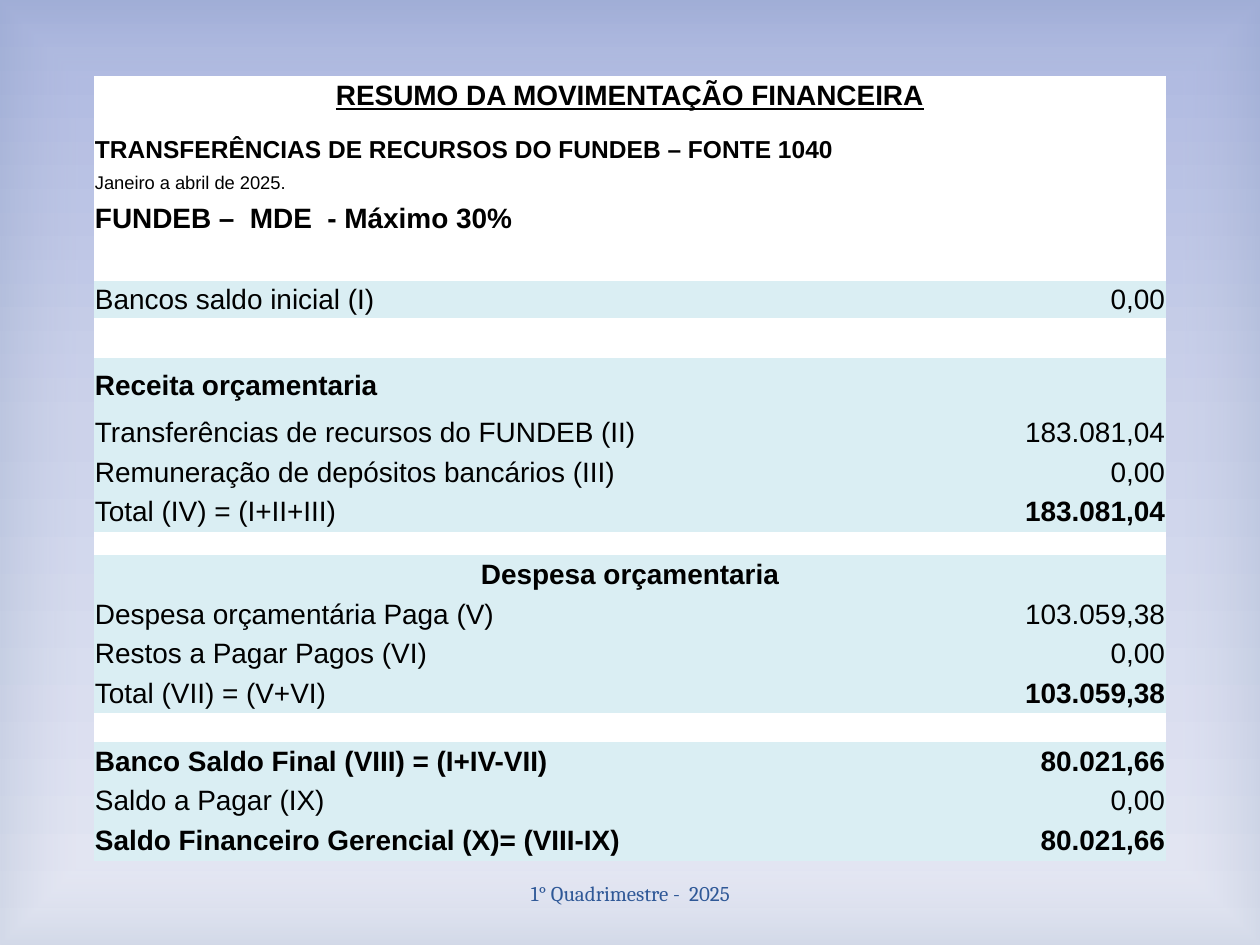
from pptx import Presentation
from pptx.dml.color import RGBColor
from pptx.enum.shapes import MSO_SHAPE as Shape
from pptx.enum.text import MSO_ANCHOR as Anchor, PP_ALIGN as Align
from pptx.oxml import parse_xml
from pptx.oxml.ns import nsdecls, qn
from pptx.util import Pt

PX = 914400 // 126
WIDTH, HEIGHT = 1260, 945
BLACK = RGBColor(0x00, 0x00, 0x00)
WHITE = RGBColor(0xFF, 0xFF, 0xFF)
AQUA = RGBColor(0xDA, 0xEE, 0xF3)
NAVY = RGBColor(0x2F, 0x58, 0x97)
SKY = [(0, "A2AEDC", 100), (45, "C6CDE8", 100), (100, "E3E6F3", 100)]
VIGNETTE = [(83, "FFFFFF", 11), (100, "9BADC4", 23)]
DOWNWARD = '<a:lin ang="5400000" scaled="0"/>'
FROM_CENTRE = '<a:path path="rect"><a:fillToRect l="50000" t="50000" r="50000" b="50000"/></a:path>'
NO_TABLE_STYLE = "{2D5ABB26-0587-4C30-8999-92F81FD0307C}"

FOOTER = "1° Quadrimestre -  2025"
TABLE_LEFT, TABLE_TOP = 94, 76
COLUMNS = (827, 245)
# height, fill, label, size, bold, alignment
HEADINGS = {
    0: (39, WHITE, "RESUMO DA MOVIMENTAÇÃO FINANCEIRA", 16, Align.CENTER),
    2: (33, WHITE, "TRANSFERÊNCIAS DE RECURSOS DO FUNDEB – FONTE 1040", 14, Align.LEFT),
    3: (33, WHITE, "Janeiro a abril de 2025.", 10.5, Align.LEFT),
    4: (39, WHITE, "FUNDEB –  MDE  - Máximo 30%", 16, Align.LEFT),
    8: (55, AQUA, "Receita orçamentaria", 16, Align.LEFT),
    13: (40, AQUA, "Despesa orçamentaria", 16, Align.CENTER),
}
GAPS = {1: 18, 5: 42, 7: 39, 12: 23, 17: 29}
ENTRIES = {
    6: (39, "Bancos saldo inicial (I)", "0,00", False, False),
    9: (40, "Transferências de recursos do FUNDEB (II)", "183.081,04", False, False),
    10: (39, "Remuneração de depósitos bancários (III)", "0,00", False, False),
    11: (40, "Total (IV) = (I+II+III)", "183.081,04", False, True),
    14: (39, "Despesa orçamentária Paga (V)", "103.059,38", False, False),
    15: (40, "Restos a Pagar Pagos (VI)", "0,00", False, False),
    16: (39, "Total (VII) = (V+VI)", "103.059,38", False, True),
    18: (39, "Banco Saldo Final (VIII) = (I+IV-VII)", "80.021,66", True, True),
    19: (40, "Saldo a Pagar (IX)", "0,00", False, False),
    20: (40, "Saldo Financeiro Gerencial (X)= (VIII-IX)", "80.021,66", True, True),
}
TITLE, PERIOD, UNSPANNED, OPENING = 0, 3, 4, 6


def paint_gradient(fill, owner, stops, direction):
    """Give the fill inside owner these (position, colour, opacity) stops."""
    fill.gradient()
    gradient = next(owner.iter(qn("a:gradFill")))
    marks = "".join(
        f'<a:gs pos="{at * 1000}"><a:srgbClr val="{colour}">'
        f'<a:alpha val="{opacity * 1000}"/></a:srgbClr></a:gs>'
        for at, colour, opacity in stops)
    gradient.getparent().replace(gradient, parse_xml(
        f'<a:gradFill {nsdecls("a")} rotWithShape="1"><a:gsLst>{marks}</a:gsLst>{direction}</a:gradFill>'))


def write(cell, text, fill, size=16, bold=False, align=Align.LEFT):
    """Fill one table cell."""
    cell.fill.solid()
    cell.fill.fore_color.rgb = fill
    cell.vertical_anchor = Anchor.MIDDLE
    cell.margin_left = cell.margin_right = cell.margin_top = PX
    cell.margin_bottom = 0
    cell.text = text
    line = cell.text_frame.paragraphs[0]
    line.alignment = align
    font = line.font
    font.name, font.size, font.bold = "Arial", Pt(size), bold
    font.color.rgb = BLACK


def rule(cell, side):
    """Draw a white line along one side of a cell."""
    cell._tc.get_or_add_tcPr().insert(0, parse_xml(
        f'<a:{side} {nsdecls("a")} w="12700"><a:solidFill><a:srgbClr val="{WHITE}"/></a:solidFill></a:{side}>'))


def add_summary(slide):
    """Add the table of balances, revenue and expenses."""
    count = len(HEADINGS) + len(GAPS) + len(ENTRIES)
    heights = {row: part[0] for row, part in (HEADINGS | ENTRIES).items()} | GAPS
    frame = slide.shapes.add_table(count, len(COLUMNS), TABLE_LEFT * PX, TABLE_TOP * PX,
                                   sum(COLUMNS) * PX, sum(heights.values()) * PX)
    table = frame.table
    table.first_row = table.horz_banding = False
    next(table._tbl.iter(qn("a:tableStyleId"))).text = NO_TABLE_STYLE
    for column, width in zip(table.columns, COLUMNS):
        column.width = width * PX
    for index, row in enumerate(table.rows):
        row.height = heights[index] * PX
        label, value = row.cells
        if index in ENTRIES:
            _, name, amount, name_bold, amount_bold = ENTRIES[index]
            write(label, name, AQUA, bold=name_bold, align=Align.JUSTIFY)
            write(value, amount, AQUA, bold=amount_bold, align=Align.RIGHT)
            continue
        _, fill, text, size, align = HEADINGS.get(index, (0, WHITE, "", 6, Align.LEFT))
        write(label, text, fill, size, index != PERIOD, align)
        write(value, "", fill, 6)
        if index != UNSPANNED:
            label.merge(value)
    table.cell(TITLE, 0).text_frame.paragraphs[0].font.underline = True
    for column in range(len(COLUMNS)):
        rule(table.cell(OPENING - 1, column), "lnB")
        rule(table.cell(OPENING, column), "lnT")


def main():
    """Build the slide."""
    deck = Presentation()
    deck.slide_width, deck.slide_height = WIDTH * PX, HEIGHT * PX
    slide = deck.slides.add_slide(deck.slide_layouts[6])
    paint_gradient(slide.background.fill, slide._element, SKY, DOWNWARD)

    vignette = slide.shapes.add_shape(Shape.RECTANGLE, 0, 0, WIDTH * PX, HEIGHT * PX)
    vignette.shadow.inherit = False
    vignette.line.fill.background()
    paint_gradient(vignette.fill, vignette._element, VIGNETTE, FROM_CENTRE)

    footer = slide.shapes.add_textbox(431 * PX, 868 * PX, 399 * PX, 50 * PX).text_frame
    footer.word_wrap = True
    footer.vertical_anchor = Anchor.MIDDLE
    footer.text = FOOTER
    line = footer.paragraphs[0]
    line.alignment = Align.CENTER
    line.font.name, line.font.size = "Cambria", Pt(12)
    line.font.color.rgb = NAVY

    add_summary(slide)
    deck.save("out.pptx")


if __name__ == "__main__":
    main()
